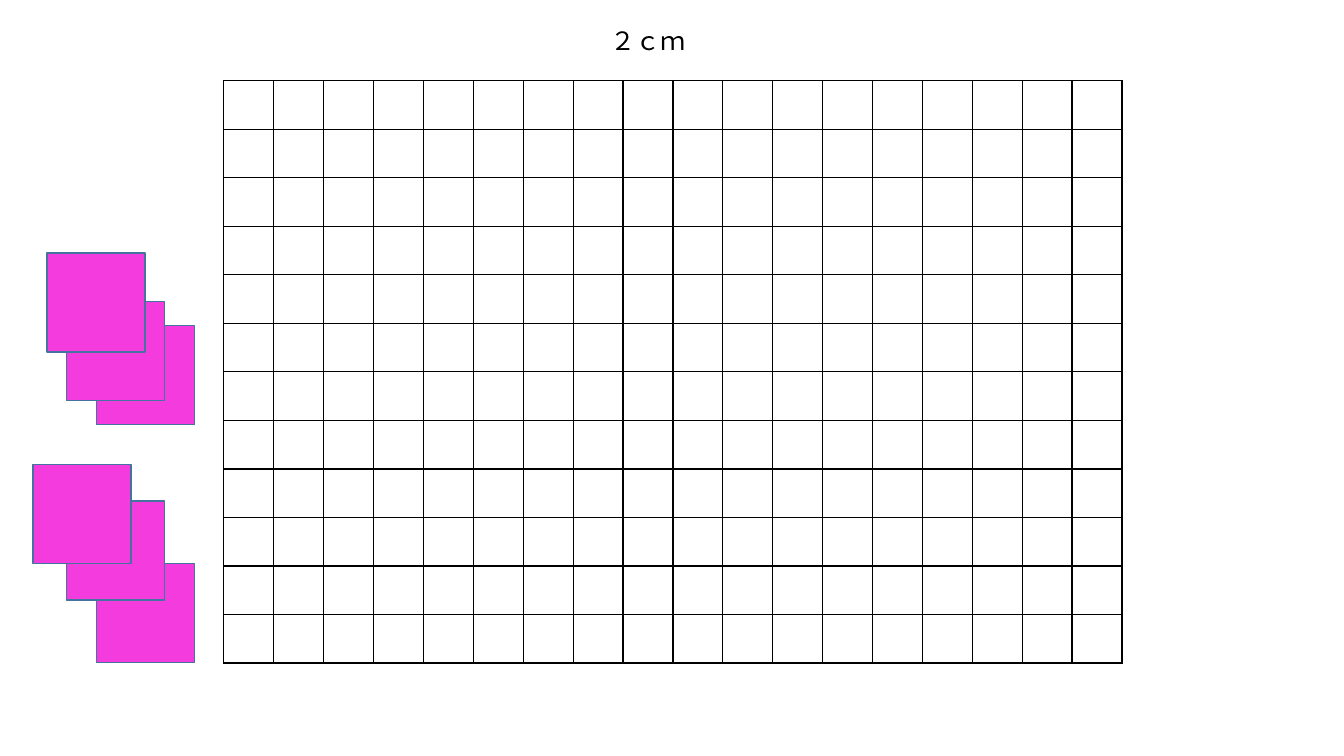
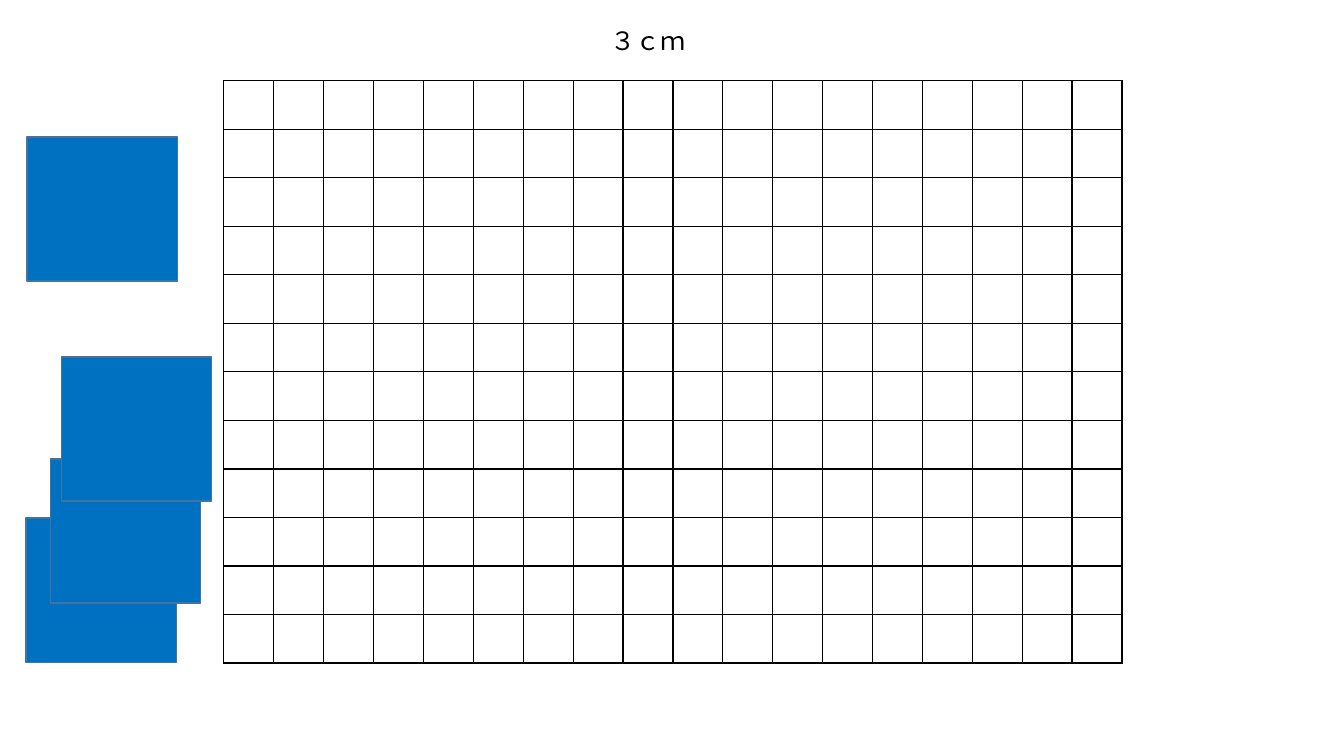
from lxml import etree
from pptx import Presentation
from pptx.dml.color import RGBColor
from pptx.enum.shapes import MSO_SHAPE
from pptx.enum.text import MSO_ANCHOR, MSO_AUTO_SIZE, PP_ALIGN
from pptx.oxml.ns import qn
from pptx.util import Inches, Pt

RECTANGLE = MSO_SHAPE.RECTANGLE
TOP = MSO_ANCHOR.TOP
GROW = MSO_AUTO_SIZE.SHAPE_TO_FIT_TEXT
LEFT = PP_ALIGN.LEFT

BLACK = RGBColor(0x00, 0x00, 0x00)
WHITE = RGBColor(0xFF, 0xFF, 0xFF)
PINK = RGBColor(0xF4, 0x3C, 0xDE)
BLUE = RGBColor(0x00, 0x70, 0xC0)
OUTLINE = RGBColor(0x43, 0x73, 0x9E)

COLUMNS, ROWS = 18, 12
GRID_LEFT, GRID_TOP = 2.22, 0.8
COLUMN, ROW = 8.91 / COLUMNS, 5.78 / ROWS


def write(frame, text, *, font="Calibri", size=18, color=BLACK, align=LEFT):
    paragraph = frame.paragraphs[0]
    paragraph.alignment = align
    run = paragraph.add_run()
    run.text = text
    run.font.name = font
    run.font.size = Pt(size)
    run.font.color.rgb = color


def draw_borders(cell, color, width):
    properties = cell._tc.get_or_add_tcPr()
    for position, side in enumerate(("lnL", "lnR", "lnT", "lnB")):
        border = etree.Element(qn(f"a:{side}"), w=str(Pt(width)))
        fill = etree.SubElement(border, qn("a:solidFill"))
        etree.SubElement(fill, qn("a:srgbClr"), val=str(color))
        properties.insert(position, border)


class SquaredPaper:
    line_width = 1

    def __init__(self, deck):
        self.deck = deck
        self.slide = None

    def place(self, column, row, columns, rows):
        return (
            Inches(GRID_LEFT + column * COLUMN),
            Inches(GRID_TOP + row * ROW),
            Inches(columns * COLUMN),
            Inches(rows * ROW),
        )

    def start(self, heading):
        self.slide = self.deck.slides.add_slide(self.deck.slide_layouts[5])
        title = self.slide.shapes.title
        title.left, title.top, title.width, title.height = self.place(7.54, -1.25, 2.26, 0.83)
        frame = title.text_frame
        frame.word_wrap = True
        frame.auto_size = GROW
        frame.vertical_anchor = TOP
        write(frame, heading)

    def grid(self):
        area = self.place(0, 0, COLUMNS, ROWS)
        table = self.slide.shapes.add_table(ROWS, COLUMNS, *area).table
        table.first_row = False
        table.horz_banding = False
        for cell in table.iter_cells():
            cell.fill.solid()
            cell.fill.fore_color.rgb = WHITE
            draw_borders(cell, BLACK, self.line_width)

    def tile(self, column, row, size, color):
        square = self.slide.shapes.add_shape(RECTANGLE, *self.place(column, row, *size))
        square.shadow.inherit = False
        square.fill.solid()
        square.fill.fore_color.rgb = color
        square.line.color.rgb = OUTLINE
        square.line.width = Pt(self.line_width)


EXERCISES = [
    ("２ｃｍ", PINK, (1.96, 2.04), [
        (-2.55, 9.95), (-3.15, 8.66), (-3.82, 7.91),
        (-2.55, 5.05), (-3.15, 4.55), (-3.54, 3.55),
    ]),
    ("３ｃｍ", BLUE, (3.01, 2.97), [
        (-3.96, 9.01), (-3.47, 7.79), (-3.25, 5.69), (-3.94, 1.16),
    ]),
]


def main():
    deck = Presentation()
    deck.slide_width, deck.slide_height = Inches(13.33), Inches(7.5)
    paper = SquaredPaper(deck)
    for heading, color, size, corners in EXERCISES:
        paper.start(heading)
        paper.grid()
        for column, row in corners:
            paper.tile(column, row, size, color)
    deck.save("out.pptx")


if __name__ == "__main__":
    main()
